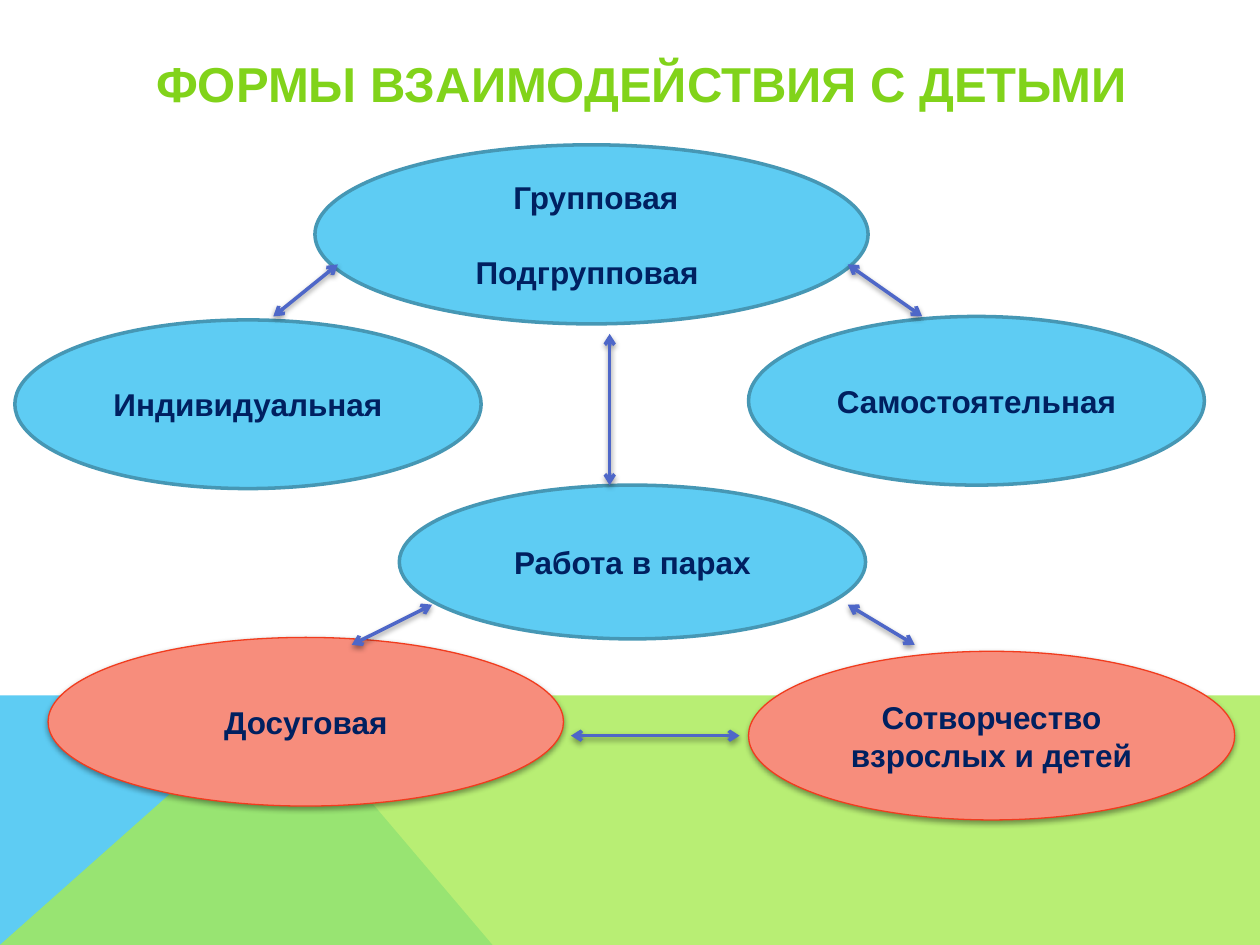
from dataclasses import dataclass

import pptx
import pptx.dml.color
import pptx.enum.shapes
import pptx.enum.text
import pptx.oxml
import pptx.oxml.ns
import pptx.util

Cm = pptx.util.Cm
Pt = pptx.util.Pt
qn = pptx.oxml.ns.qn


@dataclass(frozen=True)
class Theme:
    font: str = "Arial"
    title_size: float = 28
    label_size: float = 18
    title: str = "81D31A"
    label: str = "002060"
    blue: str = "5ECCF3"
    blue_line: str = "4697B4"
    red: str = "F78D7C"
    red_line: str = "F13C1E"
    green: str = "A7EA52"
    arrow: str = "4E67C8"


THEME = Theme()
WIDTH, HEIGHT = 25.4, 19.05

# Boxes in centimetres: left, top, width, height
BASE_BOX = (0, 14.02, WIDTH, 5.03)
TITLE_BOX = (2.49, 0.91, 20.88, 1.52)
BLUE_FORMS = [
    ((6.35, 2.92, 11.15, 3.61), [" Групповая", "Подгрупповая "]),
    ((0.3, 6.45, 9.4, 3.4), ["Индивидуальная"]),
    ((15.09, 6.38, 9.19, 3.4), ["Самостоятельная"]),
    ((8.05, 9.78, 9.4, 3.1), ["Работа в парах"]),
]
RED_FORMS = [
    ((0.97, 12.85, 10.39, 3.4), ["Досуговая"]),
    ((15.09, 13.13, 9.8, 3.4), ["Сотворчество взрослых и детей"]),
]
# Arrow ends: from x, from y, to x, to y
ARROWS = [
    (6.81, 5.33, 5.51, 6.38),
    (17.09, 5.33, 18.59, 6.38),
    (12.29, 6.73, 12.29, 9.78),
    (11.51, 14.83, 14.91, 14.83),
    (17.09, 12.19, 18.44, 13),
    (7.09, 13, 8.71, 12.19),
]


def color(value):
    return pptx.dml.color.RGBColor.from_string(value)


def set_fill(shape, value):
    shape.fill.solid()
    shape.fill.fore_color.rgb = color(value)


def add_effects(properties, shadow):
    """Replace the inherited effects with a soft shadow or with none."""
    for effects in properties.findall(qn("a:effectLst")):
        properties.remove(effects)
    content = (
        '<a:outerShdw blurRad="40000" dist="20000" dir="5400000" rotWithShape="0">'
        '<a:srgbClr val="000000"><a:alpha val="38000"/></a:srgbClr></a:outerShdw>'
    )
    properties.append(pptx.oxml.parse_xml(
        f'<a:effectLst {pptx.oxml.ns.nsdecls("a")}>{content if shadow else ""}</a:effectLst>'
    ))


def write_text(frame, lines, size, value, gap=0):
    frame.word_wrap = True
    frame.vertical_anchor = pptx.enum.text.MSO_ANCHOR.MIDDLE
    for index, line in enumerate(lines):
        paragraph = frame.paragraphs[0] if index == 0 else frame.add_paragraph()
        paragraph.alignment = pptx.enum.text.PP_ALIGN.CENTER
        if index:
            paragraph.space_before = Pt(gap)
        run = paragraph.add_run()
        run.text = line
        run.font.name = THEME.font
        run.font.size = Pt(size)
        run.font.bold = True
        run.font.color.rgb = color(value)


def add_polygon(slide, points, value):
    corners = [(Cm(x), Cm(y)) for x, y in points]
    builder = slide.shapes.build_freeform(*corners[0])
    builder.add_line_segments(corners[1:], close=True)
    shape = builder.convert_to_shape()
    set_fill(shape, value)
    shape.line.fill.background()
    shape.shadow.inherit = False
    return shape


def add_base(slide, box):
    """Blue wedge under a translucent green field."""
    left, top, width, height = box
    right, bottom = left + width, top + height
    peak = (left + 5.66, top)
    add_polygon(slide, [(left, bottom), (left, top), peak, (left + 9.93, bottom)], THEME.blue)
    field = add_polygon(slide, [(left, bottom), peak, (right, top), (right, bottom)], THEME.green)
    fill_color = field._element.spPr.find(qn("a:solidFill"))[0]
    fill_color.append(pptx.oxml.parse_xml(
        f'<a:alpha {pptx.oxml.ns.nsdecls("a")} val="80000"/>'
    ))


def add_title(slide, box, text):
    textbox = slide.shapes.add_textbox(*map(Cm, box))
    write_text(textbox.text_frame, [text], THEME.title_size, THEME.title)


def add_form(slide, box, lines, fill, outline, line_width, shadow):
    shape = slide.shapes.add_shape(pptx.enum.shapes.MSO_SHAPE.OVAL, *map(Cm, box))
    set_fill(shape, fill)
    shape.line.color.rgb = color(outline)
    shape.line.width = Pt(line_width)
    add_effects(shape._element.spPr, shadow)
    write_text(shape.text_frame, lines, THEME.label_size, THEME.label, gap=21)


def add_arrow(slide, ends):
    connector = slide.shapes.add_connector(
        pptx.enum.shapes.MSO_CONNECTOR.STRAIGHT, *map(Cm, ends))
    connector.line.color.rgb = color(THEME.arrow)
    connector.line.width = Pt(2)
    properties = connector._element.spPr
    for tag in ("headEnd", "tailEnd"):
        properties.find(qn("a:ln")).append(pptx.oxml.parse_xml(
            f'<a:{tag} {pptx.oxml.ns.nsdecls("a")} type="arrow"/>'
        ))
    add_effects(properties, shadow=True)


def main():
    presentation = pptx.Presentation()
    presentation.slide_width = Cm(WIDTH)
    presentation.slide_height = Cm(HEIGHT)
    slide = presentation.slides.add_slide(presentation.slide_layouts[6])

    # Backdrop and heading
    add_base(slide, BASE_BOX)
    add_title(slide, TITLE_BOX, "ФОРМЫ ВЗАИМОДЕЙСТВИЯ С ДЕТЬМИ")

    # Forms of interaction
    for box, lines in BLUE_FORMS:
        add_form(slide, box, lines, THEME.blue, THEME.blue_line, 2, shadow=False)
    for box, lines in RED_FORMS:
        add_form(slide, box, lines, THEME.red, THEME.red_line, 0.75, shadow=True)

    # Links between the forms
    for ends in ARROWS:
        add_arrow(slide, ends)

    presentation.save("out.pptx")


if __name__ == "__main__":
    main()
